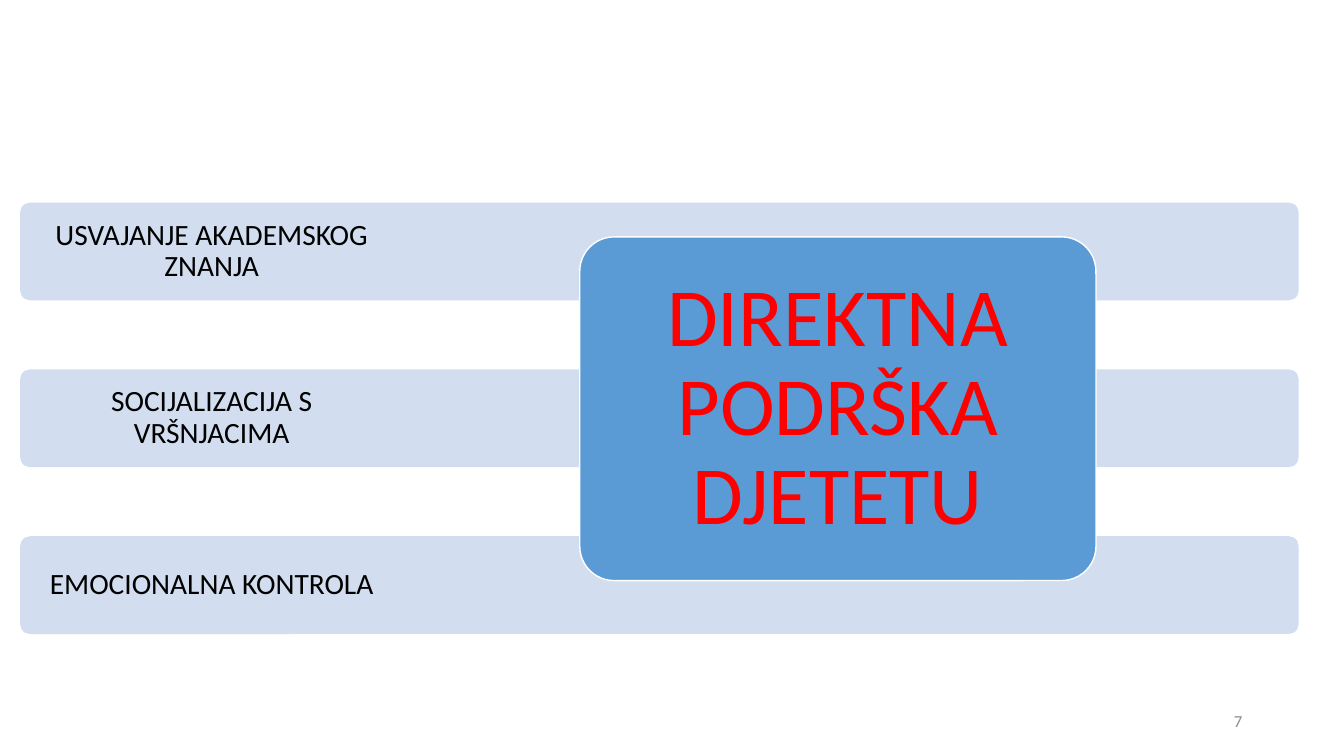
from pptx import Presentation
from pptx.dml.color import RGBColor
from pptx.enum.shapes import MSO_SHAPE as Shape
from pptx.enum.text import MSO_ANCHOR as Anchor, PP_ALIGN as Align
from pptx.util import Inches, Pt

COLORS = {
    "band": "D2DEEF",
    "card": "5B9BD5",
    "white": "FFFFFF",
    "black": "000000",
    "red": "FF0000",
    "grey": "8C8C8C",
}
GOALS = [
    "USVAJANJE AKADEMSKOG ZNANJA",
    "SOCIJALIZACIJA S VRŠNJACIMA",
    "EMOCIONALNA KONTROLA",
]
BAND_LEFT, BAND_TOP, BAND_STEP, BAND_HEIGHT = 0.2, 2.01, 1.655, 0.97


def color(name):
    return RGBColor.from_string(COLORS[name])


def add_panel(page, left, top, width, height, fill, line=None):
    panel = page.shapes.add_shape(
        Shape.ROUNDED_RECTANGLE,
        Inches(left), Inches(top), Inches(width), Inches(height))
    panel.adjustments[0] = 0.1
    panel.shadow.inherit = False
    panel.fill.solid()
    panel.fill.fore_color.rgb = color(fill)
    if line:
        panel.line.color.rgb = color(line)
        panel.line.width = Pt(1)
    else:
        panel.line.fill.background()


def add_text(page, text, left, top, width, height, *, size, ink,
             align=Align.CENTER, inset=0.1, spacing=0.9):
    box = page.shapes.add_textbox(
        Inches(left), Inches(top), Inches(width), Inches(height))
    frame = box.text_frame
    frame.word_wrap = True
    frame.vertical_anchor = Anchor.MIDDLE
    frame.margin_left = frame.margin_right = Inches(inset)
    frame.margin_top = frame.margin_bottom = Inches(inset)
    para = frame.paragraphs[0]
    para.alignment = align
    para.line_spacing = spacing
    span = para.add_run()
    span.text = text
    span.font.name = "Calibri"
    span.font.size = Pt(size)
    span.font.color.rgb = color(ink)


def main():
    deck = Presentation()
    deck.slide_width, deck.slide_height = Inches(13.33), Inches(7.5)
    page = deck.slides.add_slide(deck.slide_layouts[6])

    add_text(page, "7", 9.42, 6.95, 3, 0.4, size=12, ink="grey",
             align=Align.RIGHT, spacing=1.0)
    for row, goal in enumerate(GOALS):
        top = BAND_TOP + row * BAND_STEP
        add_panel(page, BAND_LEFT, top, 12.68, BAND_HEIGHT, "band")
        add_text(page, goal, BAND_LEFT, top, 3.8, BAND_HEIGHT,
                 size=21, ink="black", inset=0.16)
    add_panel(page, 5.75, 2.35, 5.12, 3.41, "card", line="white")
    add_text(page, "DIREKTNA PODRŠKA DJETETU", 5.85, 2.45, 4.92, 3.21,
             size=59, ink="red", inset=0.25)

    deck.save("out.pptx")


if __name__ == "__main__":
    main()
